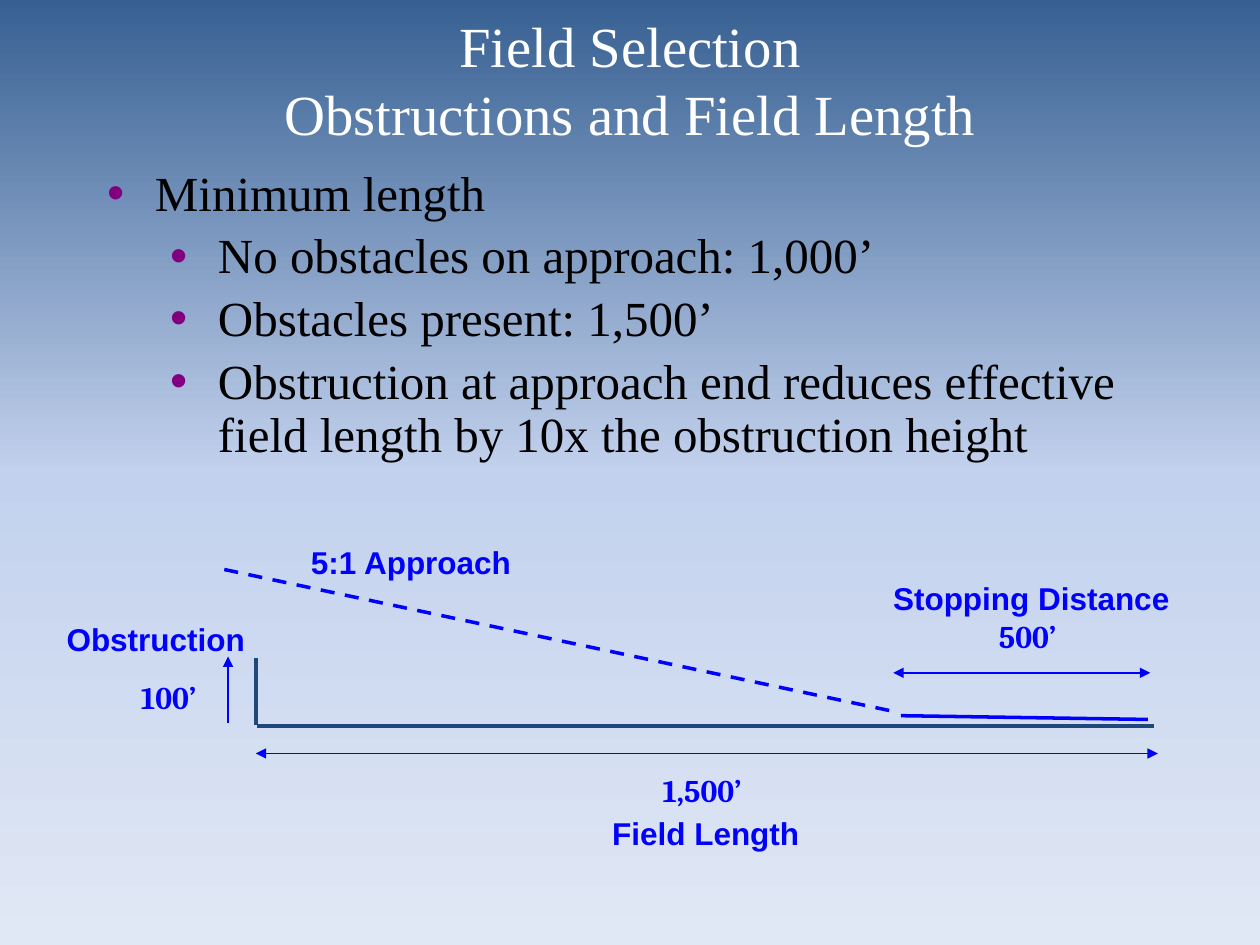
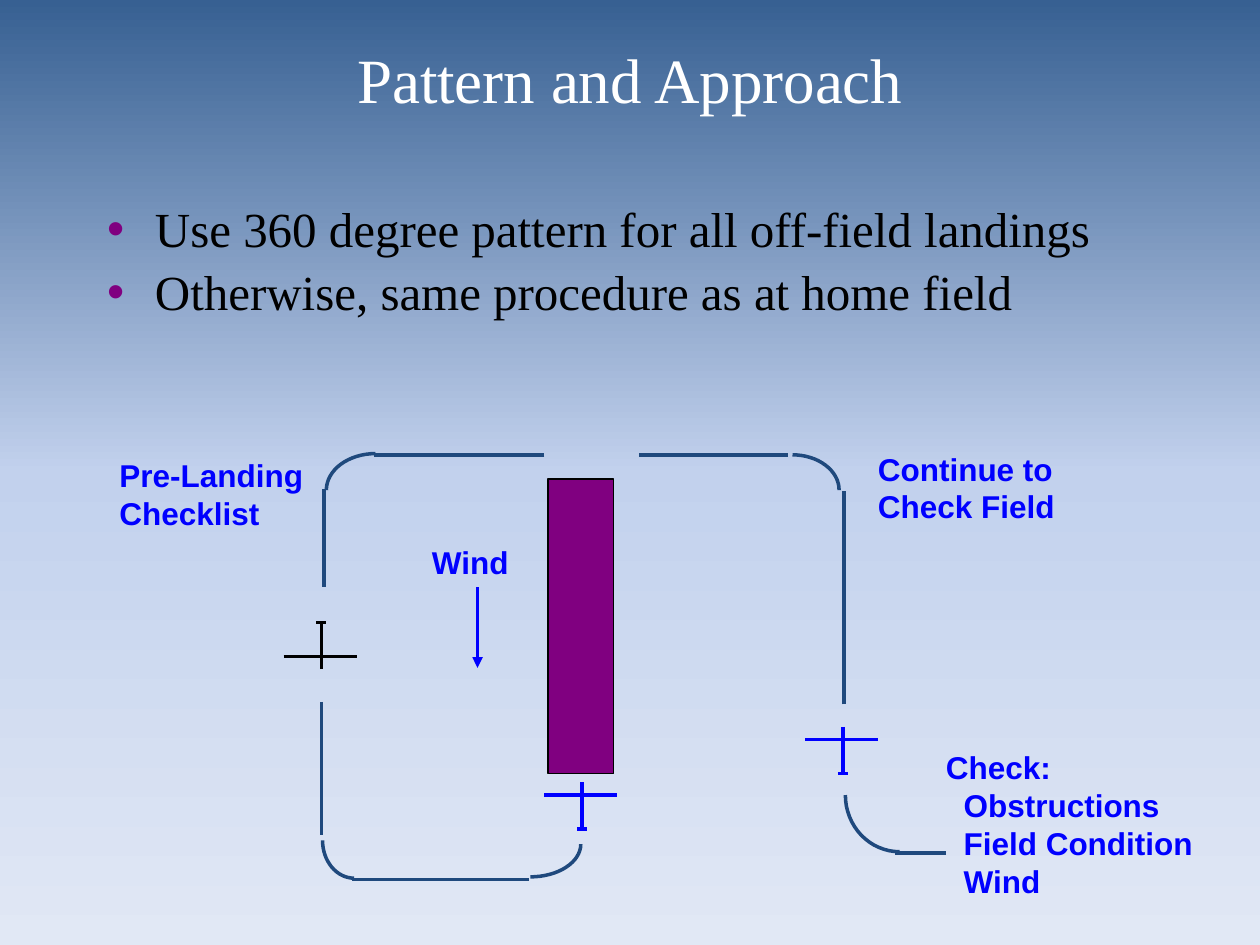
import copy
import math

import pptx
import pptx.dml.color
import pptx.enum.dml
import pptx.enum.shapes
import pptx.enum.text
import pptx.oxml.ns
import pptx.util
from lxml import etree

RGB = pptx.dml.color.RGBColor
WHITE = RGB(0xFF, 0xFF, 0xFF)
BLACK = RGB(0x00, 0x00, 0x00)
BLUE = RGB(0x00, 0x00, 0xFF)
NAVY = RGB(0x1F, 0x49, 0x7D)
PURPLE = RGB(0x80, 0x00, 0x80)
SKY = [(0, RGB(0x37, 0x60, 0x92)), (0.5, RGB(0xC2, 0xD1, 0xED)), (1, RGB(0xE1, 0xE8, 0xF5))]

SERIF, SANS, NUMBERS = "Times New Roman", "Arial", "Cambria"
PX = 9144
TITLE_BOX = (50, 0, 900, 125)
LABEL_SLACK = 4

FIELD_LENGTH = {
    "title": "Field Selection\vObstructions and Field Length",
    "title_size": 32.4,
    "body_top": 129,
    "bullets": [
        (0, "Minimum length"),
        (1, "No obstacles on approach: 1,000’"),
        (1, "Obstacles present: 1,500’"),
        (1, "Obstruction at approach end reduces effective field length by 10x the obstruction height"),
    ],
    "lines": [
        ((204, 576, 916, 576), NAVY, {}),
        ((203, 522, 203, 575), NAVY, {}),
        ((178, 452, 711, 565), BLUE, {"dashed": True}),
        ((715, 568, 911, 571), BLUE, {}),
        ((203, 598, 919, 598), BLUE, {"width": 1, "arrows": ("headEnd", "tailEnd")}),
        ((181, 521, 181, 574), BLUE, {"width": 1, "arrows": ("headEnd",)}),
        ((709, 534, 913, 534), BLUE, {"width": 1, "arrows": ("headEnd", "tailEnd")}),
    ],
    "labels": [
        ((102, 533, 66, 40), NUMBERS, [(0, "100’")]),
        ((516, 607, 84, 40), NUMBERS, [(0, "1,500’")]),
        ((783, 485, 66, 40), NUMBERS, [(0, "500’")]),
        ((476, 641, 168, 40), SANS, [(0, "Field Length")]),
        ((237, 426, 180, 40), SANS, [(0, "5:1 Approach")]),
        ((43, 487, 161, 40), SANS, [(0, "Obstruction")]),
        ((699, 455, 239, 40), SANS, [(0, "Stopping Distance")]),
    ],
}

PATTERN = {
    "title": "Pattern and Approach",
    "title_size": 36,
    "body_top": 158,
    "bullets": [
        (0, "Use 360 degree pattern for all off-field landings"),
        (0, "Otherwise, same procedure as at home field"),
    ],
    "lines": [
        ((751, 677, 710, 677), NAVY, {}),
        ((670, 559, 670, 390), NAVY, {}),
        ((625, 361, 507, 361), NAVY, {}),
        ((432, 361, 297, 361), NAVY, {}),
        ((257, 388, 257, 466), NAVY, {}),
        ((255, 557, 255, 663), NAVY, {}),
        ((420, 698, 279, 698), NAVY, {}),
        ((379, 466, 379, 530), BLUE, {"arrows": ("tailEnd",)}),
    ],
    "labels": [
        ((741, 589, 216, 130), SANS,
         [(0, "Check:"), (14, "Obstructions"), (14, "Field Condition"), (14, "Wind")]),
        ((333, 426, 81, 40), SANS, [(0, "Wind")]),
        ((687, 352, 160, 70), SANS, [(0, "Continue to"), (0, "Check Field")]),
        ((85, 357, 166, 70), SANS, [(0, "Pre-Landing"), (0, "Checklist")]),
    ],
}
RUNWAY = (435, 380, 52, 234)
TURNS = [
    ((714, 631), (-43, 45)),
    ((629, 389), (37, -28)),
    ((298, 389), (-39, -29)),
    ((281, 667), (-25, 30)),
    ((421, 670), (40, 26)),
]
GLIDERS = [(669, 587, 1, BLUE), (462, 631, 1, BLUE), (255, 521, -1, BLACK)]
GLIDER_PARTS = [(-30, 0, 28, 0), (0, -10, 0, 26), (-4, 27, 4, 27)]


def emu(*lengths):
    return [pptx.util.Emu(round(length * PX)) for length in lengths]


def add_xml(parent, tag, **attributes):
    return etree.SubElement(parent, pptx.oxml.ns.qn(tag), attributes)


def place(shape, box):
    shape.left, shape.top, shape.width, shape.height = emu(*box)


def write(paragraph, text, font=SANS, size=18, color=BLUE, bold=False, align=None):
    paragraph.text = text
    paragraph.alignment = align
    for run in paragraph.runs:
        run.font.name, run.font.size = font, pptx.util.Pt(size)
        run.font.bold, run.font.color.rgb = bold, color
    for line_break in paragraph._p.findall(pptx.oxml.ns.qn("a:br")):
        line_break.append(copy.deepcopy(paragraph.runs[0]._r.rPr))


def paragraphs(frame, count):
    return [frame.paragraphs[0]] + [frame.add_paragraph() for _ in range(count - 1)]


def paint_sky(master):
    fill = master.background.fill
    fill.gradient()
    fill.gradient_angle = 270
    stops = master.element.find(".//" + pptx.oxml.ns.qn("a:gsLst"))
    stops.append(copy.deepcopy(stops[-1]))
    for stop, (position, color) in zip(fill.gradient_stops, SKY):
        stop.position, stop.color.rgb = position, color


def draw_line(shapes, ends, color, width=2, dashed=False, arrows=()):
    line = shapes.add_connector(pptx.enum.shapes.MSO_CONNECTOR.STRAIGHT, *emu(*ends))
    line.line.color.rgb, line.line.width = color, pptx.util.Pt(width)
    if dashed:
        line.line.dash_style = pptx.enum.dml.MSO_LINE.DASH
    for end in arrows:
        add_xml(line.line._get_or_add_ln(), "a:" + end, type="triangle")
    add_xml(line._element.spPr, "a:effectLst")


def draw_turn(shapes, center, radii, steps=16):
    angles = [math.pi / 2 * step / steps for step in range(steps + 1)]
    points = [emu(center[0] + radii[0] * math.cos(a), center[1] + radii[1] * math.sin(a))
              for a in angles]
    outline = shapes.build_freeform(*points[0])
    outline.add_line_segments(points[1:], close=False)
    turn = outline.convert_to_shape()
    turn.shadow.inherit = False
    turn.fill.background()
    turn.line.color.rgb, turn.line.width = NAVY, pptx.util.Pt(2)


def draw_glider(shapes, x, y, direction, color):
    glider = shapes.add_group_shape()
    for x1, y1, x2, y2 in GLIDER_PARTS:
        ends = (x + x1, y + direction * y1, x + x2, y + direction * y2)
        draw_line(glider.shapes, ends, color)


def add_label(shapes, box, font, rows):
    left, top, width, height = box
    frame = shapes.add_textbox(*emu(left, top, width + LABEL_SLACK, height)).text_frame
    frame.word_wrap = False
    frame.auto_size = pptx.enum.text.MSO_AUTO_SIZE.SHAPE_TO_FIT_TEXT
    for paragraph, (indent, text) in zip(paragraphs(frame, len(rows)), rows):
        write(paragraph, text, font=font, bold=True)
        if indent:
            paragraph._p.get_or_add_pPr().set("marL", str(indent * PX))


def add_bullets(body, bullets):
    frame = body.text_frame
    frame.auto_size = pptx.enum.text.MSO_AUTO_SIZE.NONE
    for paragraph, (level, text) in zip(paragraphs(frame, len(bullets)), bullets):
        write(paragraph, text, font=SERIF, size=28, color=BLACK)
        paragraph.level, paragraph.line_spacing = level, 0.9
        properties = paragraph._p.get_or_add_pPr()
        properties.set("marL", str((38 + 50 * level) * PX))
        properties.set("indent", str(-38 * PX))
        add_xml(add_xml(properties, "a:buClr"), "a:srgbClr", val=str(PURPLE))
        add_xml(properties, "a:buChar", char="•")


def add_slide(deck, content):
    slide = deck.slides.add_slide(deck.slide_layouts[1])
    title, body = slide.placeholders
    place(title, TITLE_BOX)
    title.text_frame.auto_size = pptx.enum.text.MSO_AUTO_SIZE.NONE
    title.text_frame.vertical_anchor = pptx.enum.text.MSO_ANCHOR.MIDDLE
    write(title.text_frame.paragraphs[0], content["title"], font=SERIF,
          size=content["title_size"], color=WHITE, align=pptx.enum.text.PP_ALIGN.CENTER)
    place(body, (75, content["body_top"], 893, 417))
    add_bullets(body, content["bullets"])
    for ends, color, style in content["lines"]:
        draw_line(slide.shapes, ends, color, **style)
    for label in content["labels"]:
        add_label(slide.shapes, *label)
    return slide


def main():
    deck = pptx.Presentation()
    deck.slide_width, deck.slide_height = emu(1000, 750)
    paint_sky(deck.slide_master)
    add_slide(deck, FIELD_LENGTH)
    shapes = add_slide(deck, PATTERN).shapes
    runway = shapes.add_shape(pptx.enum.shapes.MSO_SHAPE.RECTANGLE, *emu(*RUNWAY))
    runway.shadow.inherit = False
    runway.fill.solid()
    runway.fill.fore_color.rgb = PURPLE
    runway.line.color.rgb, runway.line.width = BLACK, pptx.util.Pt(1)
    for center, radii in TURNS:
        draw_turn(shapes, center, radii)
    for glider in GLIDERS:
        draw_glider(shapes, *glider)
    deck.save("out.pptx")


if __name__ == "__main__":
    main()
